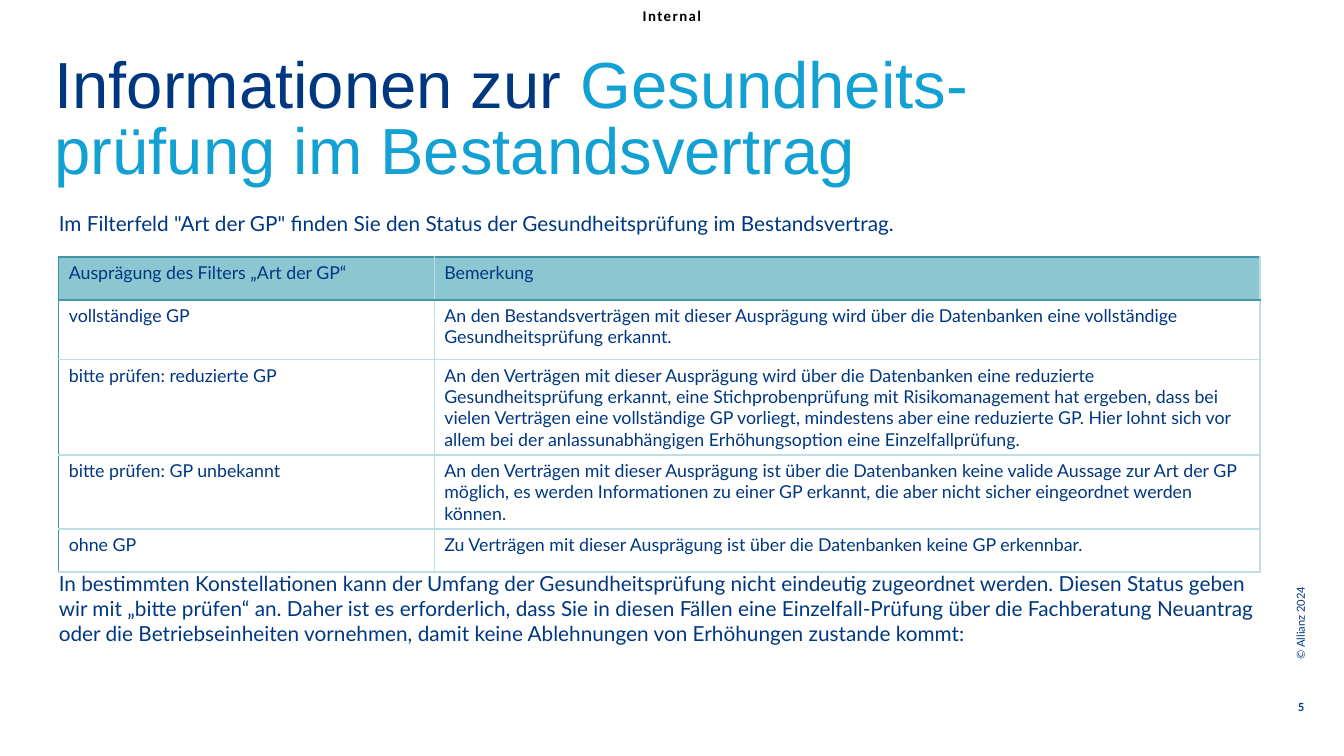
from lxml.etree import SubElement
from pptx import Presentation
from pptx.dml.color import RGBColor
from pptx.enum.text import MSO_ANCHOR as ANCHOR, PP_ALIGN as ALIGN
from pptx.oxml.ns import qn
from pptx.util import Cm, Pt

NAVY = RGBColor(0x00, 0x37, 0x81)
SKY = RGBColor(0x13, 0xA0, 0xD3)
BLACK = RGBColor(0, 0, 0)
HEADER_FILL = RGBColor(0x8C, 0xC6, 0xD0)
DARK_LINE = RGBColor(0x43, 0x96, 0xA5)
LIGHT_LINE = RGBColor(0xBE, 0xDE, 0xE5)

TITLE = [
    ("Informationen zur ", NAVY),
    ("Gesundheits-\vprüfung im Bestandsvertrag", SKY),
]
INTRO = 'Im Filterfeld "Art der GP" finden Sie den Status der Gesundheitsprüfung im Bestandsvertrag.'
CLOSING = (
    "In bestimmten Konstellationen kann der Umfang der Gesundheitsprüfung nicht eindeutig "
    "zugeordnet werden. Diesen Status geben wir mit „bitte prüfen“ an. Daher ist es "
    "erforderlich, dass Sie in diesen Fällen eine Einzelfall-Prüfung über die Fachberatung "
    "Neuantrag oder die Betriebseinheiten vornehmen, damit keine Ablehnungen von Erhöhungen "
    "zustande kommt:"
)
ROWS = [
    ("Ausprägung des Filters „Art der GP“", "Bemerkung"),
    ("vollständige GP",
     "An den Bestandsverträgen mit dieser Ausprägung wird über die Datenbanken eine "
     "vollständige Gesundheitsprüfung erkannt."),
    ("bitte prüfen: reduzierte GP",
     "An den Verträgen mit dieser Ausprägung wird über die Datenbanken eine reduzierte "
     "Gesundheitsprüfung erkannt, eine Stichprobenprüfung mit Risikomanagement hat ergeben, "
     "dass bei vielen Verträgen eine vollständige GP vorliegt, mindestens aber eine reduzierte "
     "GP. Hier lohnt sich vor allem bei der anlassunabhängigen Erhöhungsoption eine "
     "Einzelfallprüfung."),
    ("bitte prüfen: GP unbekannt",
     "An den Verträgen mit dieser Ausprägung ist über die Datenbanken keine valide Aussage zur "
     "Art der GP möglich, es werden Informationen zu einer GP erkannt, die aber nicht sicher "
     "eingeordnet werden können."),
    ("ohne GP",
     "Zu Verträgen mit dieser Ausprägung ist über die Datenbanken keine GP erkennbar."),
]
COL_WIDTHS = [8.94, 19.66]
ROW_HEIGHTS = [1.02, 1.42, 1.42, 1.02, 1.02]
LEFT = 1.4


def add_run(p, text, size=14, font="Lato", color=NAVY, bold=False):
    r = p.add_run()
    r.text = text
    r.font.size, r.font.name, r.font.bold = Pt(size), font, bold
    r.font.color.rgb = color
    return r


def set_insets(tf, left=0, top=0):
    tf.margin_left, tf.margin_top = Cm(left), Cm(top)
    tf.margin_right = tf.margin_bottom = 0


def add_text(slide, text, x, y, w, h, anchor=ANCHOR.TOP, align=ALIGN.LEFT,
             wrap=True, inset_left=0, inset_top=0, rotation=0, **font):
    box = slide.shapes.add_textbox(Cm(x), Cm(y), Cm(w), Cm(h))
    box.rotation = rotation
    tf = box.text_frame
    set_insets(tf, inset_left, inset_top)
    tf.word_wrap, tf.vertical_anchor = wrap, anchor
    p = tf.paragraphs[0]
    p.alignment = align
    return add_run(p, text, **font)


def add_title(slide):
    title = slide.shapes.title
    title.left, title.top, title.width, title.height = Cm(1.3), Cm(1.3), Cm(28.6), Cm(1.93)
    tf = title.text_frame
    set_insets(tf)
    tf.word_wrap, tf.vertical_anchor = True, ANCHOR.TOP
    p = tf.paragraphs[0]
    p.alignment, p.line_spacing = ALIGN.LEFT, Pt(45)
    for text, color in TITLE:
        first, *rest = text.split("\v")
        add_run(p, first, size=44, font="Arial", color=color)
        for line in rest:
            p.add_line_break()
            add_run(p, line, size=44, font="Arial", color=color)


def set_borders(cell, **colors):
    tc_pr = cell._tc.get_or_add_tcPr()
    for side in "LRTB":
        ln = SubElement(tc_pr, qn(f"a:ln{side}"), w=str(Pt(1)))
        fill = SubElement(ln, qn("a:solidFill"))
        SubElement(fill, qn("a:srgbClr"), val=str(colors.get(side, LIGHT_LINE)))


def add_filter_table(slide):
    table = slide.shapes.add_table(
        len(ROWS), len(COL_WIDTHS), Cm(LEFT), Cm(6.12),
        Cm(sum(COL_WIDTHS)), Cm(sum(ROW_HEIGHTS))).table
    table.first_row = table.horz_banding = False
    for col, width in zip(table.columns, COL_WIDTHS):
        col.width = Cm(width)
    for i, (texts, height) in enumerate(zip(ROWS, ROW_HEIGHTS)):
        table.rows[i].height = Cm(height)
        for j, text in enumerate(texts):
            cell = table.cell(i, j)
            cell.margin_left = cell.margin_right = Cm(0.24)
            cell.margin_top = cell.margin_bottom = Cm(0.12)
            add_run(cell.text_frame.paragraphs[0], text, size=12)
            set_borders(cell,
                        L=DARK_LINE if j == 0 else LIGHT_LINE,
                        T=DARK_LINE if i <= 1 else LIGHT_LINE,
                        B=DARK_LINE if i == 0 else LIGHT_LINE)
            if i == 0:
                cell.fill.solid()
                cell.fill.fore_color.rgb = HEADER_FILL
            else:
                cell.fill.background()


def main():
    prs = Presentation()
    prs.slide_width, prs.slide_height = Cm(32), Cm(18)
    slide = prs.slides.add_slide(prs.slide_layouts[5])

    label = add_text(slide, "Internal", 15.06, 0, 1.88, 0.74, anchor=ANCHOR.MIDDLE,
                     align=ALIGN.CENTER, wrap=False, size=10, font="Calibri",
                     color=BLACK, bold=True)
    label.font._element.set("spc", "100")
    add_title(slide)
    add_text(slide, INTRO, LEFT, 5.03, 28.5, 0.7)
    add_filter_table(slide)
    add_text(slide, CLOSING, LEFT, 13.6, 28.5, 1.9)
    add_text(slide, "© Allianz 2024", 30.1, 13.8, 2.51, 1.3, inset_top=0.1,
             rotation=270, size=7.5)
    add_text(slide, "5", 30.7, 15.7, 1.3, 2.28, anchor=ANCHOR.MIDDLE,
             inset_left=0.2, size=7.5, bold=True)
    prs.save("out.pptx")


if __name__ == "__main__":
    main()
